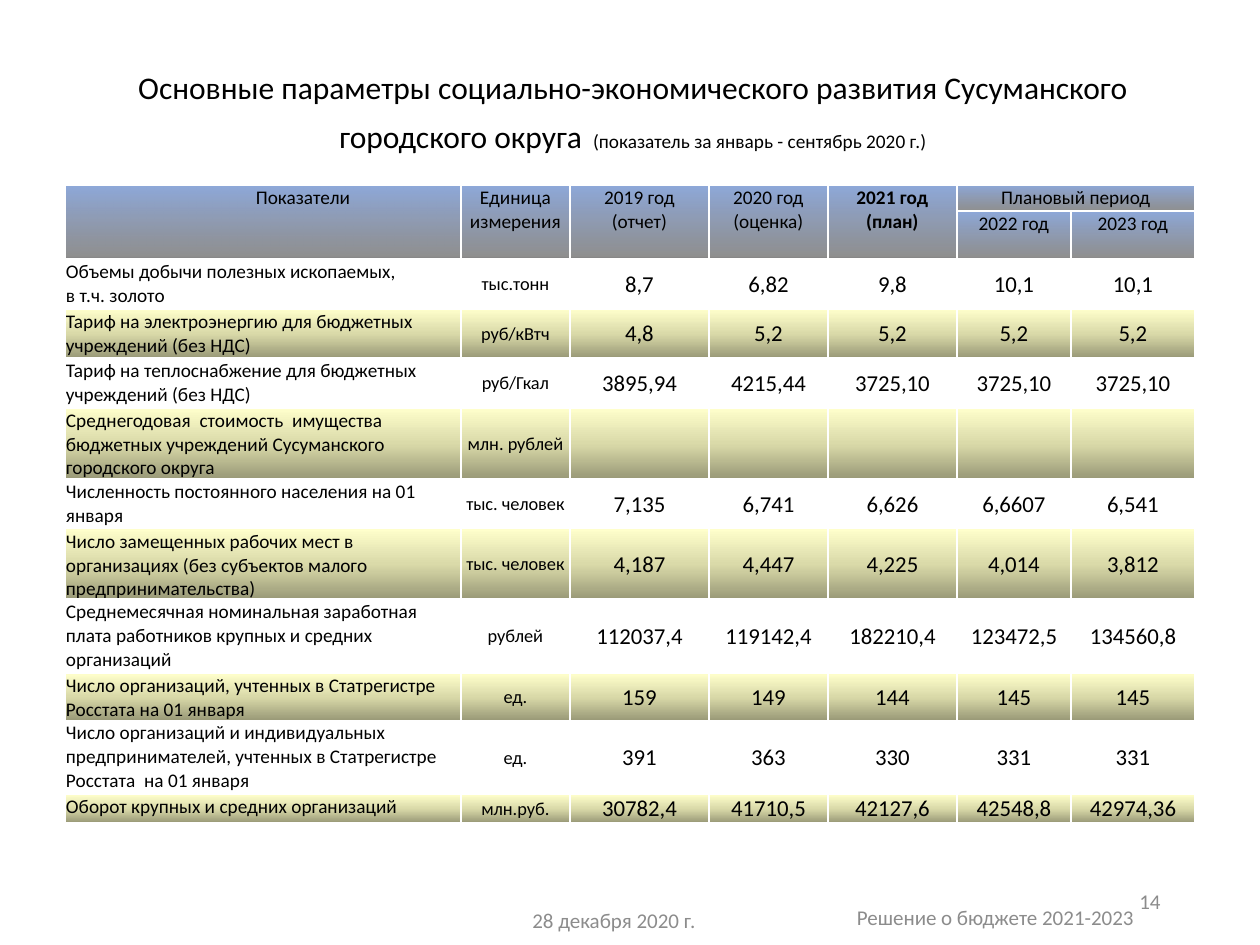
import pptx
import pptx.util
import pptx.oxml
import pptx.oxml.ns
from pptx.dml.color import RGBColor
from pptx.enum.text import MSO_ANCHOR, PP_ALIGN

BLACK = RGBColor(0x00, 0x00, 0x00)
GREY = RGBColor(0x8C, 0x8C, 0x8C)
WHITE = RGBColor(0xFF, 0xFF, 0xFF)
STEEL = RGBColor(0x8F, 0xAA, 0xDC)
ASH = RGBColor(0x80, 0x80, 0x80)
OLIVE = RGBColor(0x99, 0x99, 0x77)
SAND = RGBColor(0xDA, 0xDA, 0xA9)
CREAM = RGBColor(0xFF, 0xFF, 0xCC)
HEADER_GRADIENT = (90, [(0, STEEL, 100), (96, ASH, 87), (100, ASH, 100)])
BAND_GRADIENT = (270, [(0, OLIVE, 100), (50, SAND, 100), (100, CREAM, 100)])

FONT = "Calibri"
TITLE_BOX = (64, 66, 1138, 100)
TITLE = [
    ("Основные параметры социально-экономического развития Сусуманского городского округа", 18),
    (" ", 28),
    ("(показатель за январь - сентябрь 2020 г.)", 11),
]
FOOTERS = [
    ("28 декабря 2020 г.", (520, 895, 315, 50), PP_ALIGN.LEFT),
    ("Решение о бюджете 2021-2023", (838, 892, 315, 50), PP_ALIGN.CENTER),
    ("14", (890, 876, 283, 50), PP_ALIGN.RIGHT),
]
TABLE_LEFT, TABLE_TOP = 65, 185
COLUMNS = [396, 109, 139, 119, 129, 114, 124]
ROWS = [26, 48, 50, 49, 50, 71, 50, 70, 74, 47, 74, 27]
HEADERS = ["Показатели", "Единица измерения", "2019 год\n(отчет)",
           "2020 год\n(оценка)", "2021 год (план)"]
PLAN_HEADER = "Плановый период"
PLAN_YEARS = ["2022 год", "2023 год"]
BOLD_HEADER = 4
INDICATORS = [
    ("Объемы добычи полезных ископаемых,\nв т.ч. золото", "тыс.тонн",
     "8,7", "6,82", "9,8", "10,1", "10,1"),
    ("Тариф на электроэнергию для бюджетных учреждений (без НДС)", "руб/кВтч",
     "4,8", "5,2", "5,2", "5,2", "5,2"),
    ("Тариф на теплоснабжение для бюджетных учреждений (без НДС)", "руб/Гкал",
     "3895,94", "4215,44", "3725,10", "3725,10", "3725,10"),
    ("Среднегодовая  стоимость  имущества бюджетных учреждений Сусуманского городского округа",
     "млн. рублей", "", "", "", "", ""),
    ("Численность постоянного населения на 01 января", "тыс. человек",
     "7,135", "6,741", "6,626", "6,6607", "6,541"),
    ("Число замещенных рабочих мест в организациях (без субъектов малого предпринимательства)",
     "тыс. человек", "4,187", "4,447", "4,225", "4,014", "3,812"),
    ("Среднемесячная номинальная заработная плата работников крупных и средних организаций",
     "рублей", "112037,4", "119142,4", "182210,4", "123472,5", "134560,8"),
    ("Число организаций, учтенных в Статрегистре Росстата на 01 января", "ед.",
     "159", "149", "144", "145", "145"),
    ("Число организаций и индивидуальных предпринимателей, учтенных в Статрегистре "
     "Росстата  на 01 января", "ед.", "391", "363", "330", "331", "331"),
    ("Оборот крупных и средних организаций", "млн.руб.",
     "30782,4", "41710,5", "42127,6", "42548,8", "42974,36"),
]


def px(n):
    return pptx.util.Emu(round(n * 914400 / 126))


def add_xml(parent, xml):
    tag, rest = xml.split(" ", 1)
    parent.append(pptx.oxml.parse_xml(f"{tag} {pptx.oxml.ns.nsdecls('a')} {rest}"))


def set_font(font, size, color, bold=False):
    font.name = FONT
    font.size = pptx.util.Pt(size)
    font.color.rgb = color
    font.bold = bold


def add_text(s, box):
    tf = s.shapes.add_textbox(*map(px, box)).text_frame
    tf.word_wrap = True
    tf.vertical_anchor = MSO_ANCHOR.MIDDLE
    return tf


def add_title(s):
    p = add_text(s, TITLE_BOX).paragraphs[0]
    p.alignment = PP_ALIGN.CENTER
    p.line_spacing = 0.9
    for text, size in TITLE:
        r = p.add_run()
        r.text = text
        set_font(r.font, size, BLACK)
    shadow = (f'<a:effectLst ><a:outerShdw blurRad="38100" dist="38100" dir="2700000" algn="tl">'
              f'<a:srgbClr val="{BLACK}"><a:alpha val="43000"/></a:srgbClr>'
              f'</a:outerShdw></a:effectLst>')
    rPr = p.runs[0].font._element
    add_xml(rPr, shadow)
    rPr.append(rPr.find(pptx.oxml.ns.qn("a:latin")))


def fill_cell(cell, gradient):
    tcPr = cell._tc.get_or_add_tcPr()
    for side in ("lnL", "lnR", "lnT", "lnB"):
        add_xml(tcPr, f'<a:{side} w="12700"><a:solidFill><a:srgbClr val="{WHITE}"/>'
                      f'</a:solidFill></a:{side}>')
    if gradient is None:
        cell.fill.background()
        return
    angle, stops = gradient
    gs = "".join(f'<a:gs pos="{pos * 1000}"><a:srgbClr val="{color}">'
                 f'<a:alpha val="{alpha * 1000}"/></a:srgbClr></a:gs>'
                 for pos, color, alpha in stops)
    add_xml(tcPr, f'<a:gradFill rotWithShape="1"><a:gsLst>{gs}</a:gsLst>'
                  f'<a:lin ang="{angle * 60000}" scaled="0"/></a:gradFill>')


def write_cell(cell, text, size, align, anchor, bold=False):
    cell.margin_left = cell.margin_right = cell.margin_top = px(1)
    cell.margin_bottom = 0
    cell.vertical_anchor = anchor
    cell.text_frame.text = text
    for p in cell.text_frame.paragraphs:
        p.alignment = align
        set_font(p.font, size, BLACK, bold)


def add_indicators(s):
    frame = s.shapes.add_table(len(ROWS), len(COLUMNS), px(TABLE_LEFT), px(TABLE_TOP),
                               px(sum(COLUMNS)), px(sum(ROWS)))
    table = frame.table
    table.first_row = table.horz_banding = False
    for column, width in zip(table.columns, COLUMNS):
        column.width = px(width)
    for row, height in zip(table.rows, ROWS):
        row.height = px(height)

    plan = len(HEADERS)
    heads = [(0, c, text) for c, text in enumerate(HEADERS + [PLAN_HEADER])]
    heads += [(1, plan + i, text) for i, text in enumerate(PLAN_YEARS)]
    for r, c, text in heads:
        write_cell(table.cell(r, c), text, 11, PP_ALIGN.CENTER, MSO_ANCHOR.TOP,
                   c == BOLD_HEADER)
    table.cell(0, 0).margin_left = px(81)
    for i, values in enumerate(INDICATORS):
        for c, text in enumerate(values):
            size = (11, 10.5)[c] if c < 2 else 13
            align = PP_ALIGN.CENTER if c else PP_ALIGN.LEFT
            anchor = MSO_ANCHOR.MIDDLE if c else MSO_ANCHOR.TOP
            write_cell(table.cell(i + 2, c), text, size, align, anchor)

    for r in range(len(ROWS)):
        gradient = HEADER_GRADIENT if r < 2 else BAND_GRADIENT if r % 2 else None
        for c in range(len(COLUMNS)):
            fill_cell(table.cell(r, c), gradient)
    for c in range(plan):
        table.cell(0, c).merge(table.cell(1, c))
    table.cell(0, plan).merge(table.cell(0, plan + 1))


def main():
    prs = pptx.Presentation()
    prs.slide_width, prs.slide_height = px(1260), px(945)
    s = prs.slides.add_slide(prs.slide_layouts[6])
    add_title(s)
    add_indicators(s)
    for text, box, align in FOOTERS:
        p = add_text(s, box).paragraphs[0]
        p.text = text
        p.alignment = align
        set_font(p.font, 12, GREY)
    prs.save("out.pptx")


if __name__ == "__main__":
    main()
